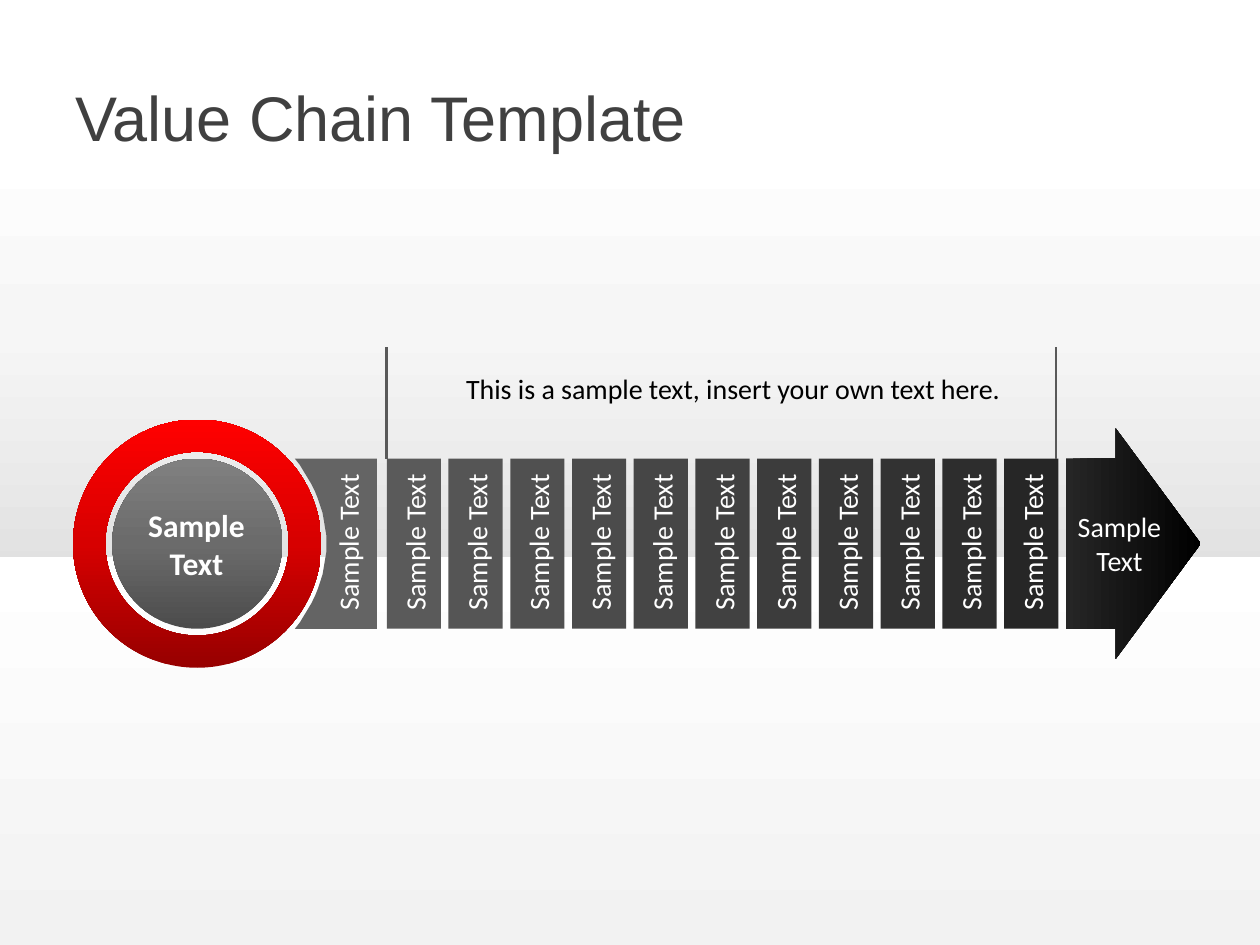
from dataclasses import dataclass
from math import asin, cos, sin

from lxml import etree
from pptx import Presentation
from pptx.dml.color import RGBColor
from pptx.enum.shapes import MSO_CONNECTOR, MSO_SHAPE
from pptx.enum.text import MSO_ANCHOR, MSO_AUTO_SIZE, PP_ALIGN
from pptx.oxml.ns import qn
from pptx.util import Pt

PX = 9144  # EMU in one px, 100 px to the inch
RECT, OVAL = MSO_SHAPE.RECTANGLE, MSO_SHAPE.OVAL
DONUT, ARROW = MSO_SHAPE.DONUT, MSO_SHAPE.RIGHT_ARROW
LINE = MSO_CONNECTOR.STRAIGHT
LEFT, CENTER = PP_ALIGN.LEFT, PP_ALIGN.CENTER
TOP, MIDDLE = MSO_ANCHOR.TOP, MSO_ANCHOR.MIDDLE
GROW = MSO_AUTO_SIZE.SHAPE_TO_FIT_TEXT
SAMPLE = "Sample Text"


@dataclass(frozen=True)
class Grad:
    stops: tuple[tuple[int, str], ...]
    angle: int  # clockwise


@dataclass(frozen=True)
class Theme:
    head: str = "Arial"
    body: str = "Calibri"
    title: str = "404040"
    white: str = "FFFFFF"
    black: str = "000000"
    rule: str = "595959"
    tail: str = "646464"
    big: int = 36
    mid: int = 18
    small: int = 16
    back: Grad = Grad(((15, "FFFFFF"), (35, "F6F6F6"), (70, "D9D9D9")), 90)
    floor: Grad = Grad(((0, "FFFFFF"), (100, "F2F2F2")), 90)
    ring: Grad = Grad(((0, "970000"), (50, "D70000"), (100, "FF0000")), 270)
    core: Grad = Grad(((0, "4C4C4C"), (50, "6B6B6B"), (100, "808080")), 270)
    tip: Grad = Grad(((0, "262626"), (100, "000000")), 0)
    bars: tuple[int, ...] = (*range(0x5A, 0x28, -5), 0x26)


@dataclass(frozen=True)
class Box:
    x: int
    y: int
    w: int
    h: int

    def emu(self) -> tuple[int, ...]:
        return tuple(n * PX for n in (self.x, self.y, self.w, self.h))


@dataclass(frozen=True)
class Label:
    box: Box
    text: str = SAMPLE
    size: int = 16
    color: str = "FFFFFF"
    bold: bool = False
    turn: int = 0
    inset: bool = False
    wrap: bool = True
    anchor: MSO_ANCHOR = MIDDLE


THEME = Theme()
BAR = Box(307, 364, 43, 135)
STEP = 49


def assign(obj, **values) -> None:
    for name, value in values.items():
        setattr(obj, name, value)


def shade(fill, node, grad: Grad) -> None:
    """Give fill, held somewhere in node, the gradient's own stops."""
    fill.gradient()
    fill.gradient_angle = -grad.angle % 360
    stops = next(node.iter(qn("a:gsLst")))
    stops.clear()
    for pos, color in grad.stops:
        stop = etree.SubElement(stops, qn("a:gs"), pos=str(pos * 1000))
        etree.SubElement(stop, qn("a:srgbClr"), val=color)


def paint(shape, fill: str | Grad) -> None:
    shape.shadow.inherit = False
    shape.line.fill.background()
    if isinstance(fill, Grad):
        shade(shape.fill, shape._element, fill)
    else:
        shape.fill.solid()
        shape.fill.fore_color.rgb = RGBColor.from_string(fill)


def draw(slide, kind, box: Box, fill: str | Grad, *adjust: float) -> None:
    shape = slide.shapes.add_shape(kind, *box.emu())
    for i, value in enumerate(adjust):
        shape.adjustments[i] = value
    paint(shape, fill)


def style(para, name: str, size: int, color: str, align, bold=False) -> None:
    para.alignment = align
    assign(para.font, name=name, size=Pt(size), bold=bold)
    para.font.color.rgb = RGBColor.from_string(color)


def write(slide, label: Label) -> None:
    shape = slide.shapes.add_textbox(*label.box.emu())
    shape.rotation = label.turn
    frame = shape.text_frame
    assign(frame, text=label.text, word_wrap=label.wrap,
           auto_size=GROW, vertical_anchor=label.anchor)
    if not label.inset:
        assign(frame, margin_left=0, margin_right=0,
               margin_top=0, margin_bottom=0)
    style(frame.paragraphs[0], THEME.body, label.size, label.color,
          CENTER, label.bold)


def rule(slide, x: int, low: int, high: int) -> None:
    line = slide.shapes.add_connector(LINE, x * PX, low * PX, x * PX, high * PX)
    line.line.width = Pt(1.5)
    line.line.color.rgb = RGBColor.from_string(THEME.rule)
    etree.SubElement(line._element.spPr, qn("a:effectLst"))


def tail(slide, ring: Box) -> None:
    """Draw the first block, hollowed on the left to follow the ring."""
    cx, cy, rad, edge = ring.x + ring.w / 2, ring.y + ring.h / 2, 102.5, 299
    low, high = BAR.y + BAR.h, BAR.y
    span, count = asin(BAR.h / 2 / rad), 24
    turns = [span * (1 - 2 * i / count) for i in range(count + 1)]
    arc = [(cx + rad * cos(t), cy + rad * sin(t)) for t in turns]
    path = slide.shapes.build_freeform(edge, high, scale=PX)
    path.add_line_segments([(edge, low), *arc], close=True)
    paint(path.convert_to_shape(), THEME.tail)


def main() -> None:
    deck = Presentation()
    assign(deck, slide_width=1000 * PX, slide_height=750 * PX)
    slide = deck.slides.add_slide(deck.slide_layouts[5])
    shade(slide.background.fill, slide._element, THEME.back)

    title = slide.shapes.title
    assign(title, **dict(zip(("left", "top", "width", "height"),
                             Box(50, 30, 900, 125).emu())))
    assign(title.text_frame, text="Value Chain Template",
           vertical_anchor=MIDDLE)
    style(title.text_frame.paragraphs[0], THEME.head, THEME.big,
          THEME.title, LEFT)

    draw(slide, RECT, Box(0, 442, 1000, 308), THEME.floor)
    ring = Box(58, 333, 197, 197)
    draw(slide, DONUT, ring, THEME.ring, 0.13)
    draw(slide, OVAL, Box(89, 364, 135, 135), THEME.core)
    tail(slide, ring)
    draw(slide, ARROW, Box(846, 340, 107, 183), THEME.tip, 0.74, 0.63)

    labels = [Label(Box(101, 396, 110, 71), size=THEME.mid, bold=True,
                    inset=True),
              Label(Box(209, 417, 134, 27), turn=270)]
    for i, grey in enumerate(THEME.bars):
        x = BAR.x + i * STEP
        draw(slide, RECT, Box(x, BAR.y, BAR.w, BAR.h), f"{grey:02X}" * 3)
        labels.append(Label(Box(x - 45, 417, 134, 27), turn=270))
    labels += [Label(Box(843, 404, 91, 54)),
               Label(Box(357, 290, 450, 37),
                     "This is a sample text, insert your own text here.",
                     color=THEME.black, inset=True, wrap=False, anchor=TOP)]
    for label in labels:
        write(slide, label)

    for x in (BAR.x, 838):
        rule(slide, x, BAR.y, 275)
    deck.save("out.pptx")


if __name__ == "__main__":
    main()
